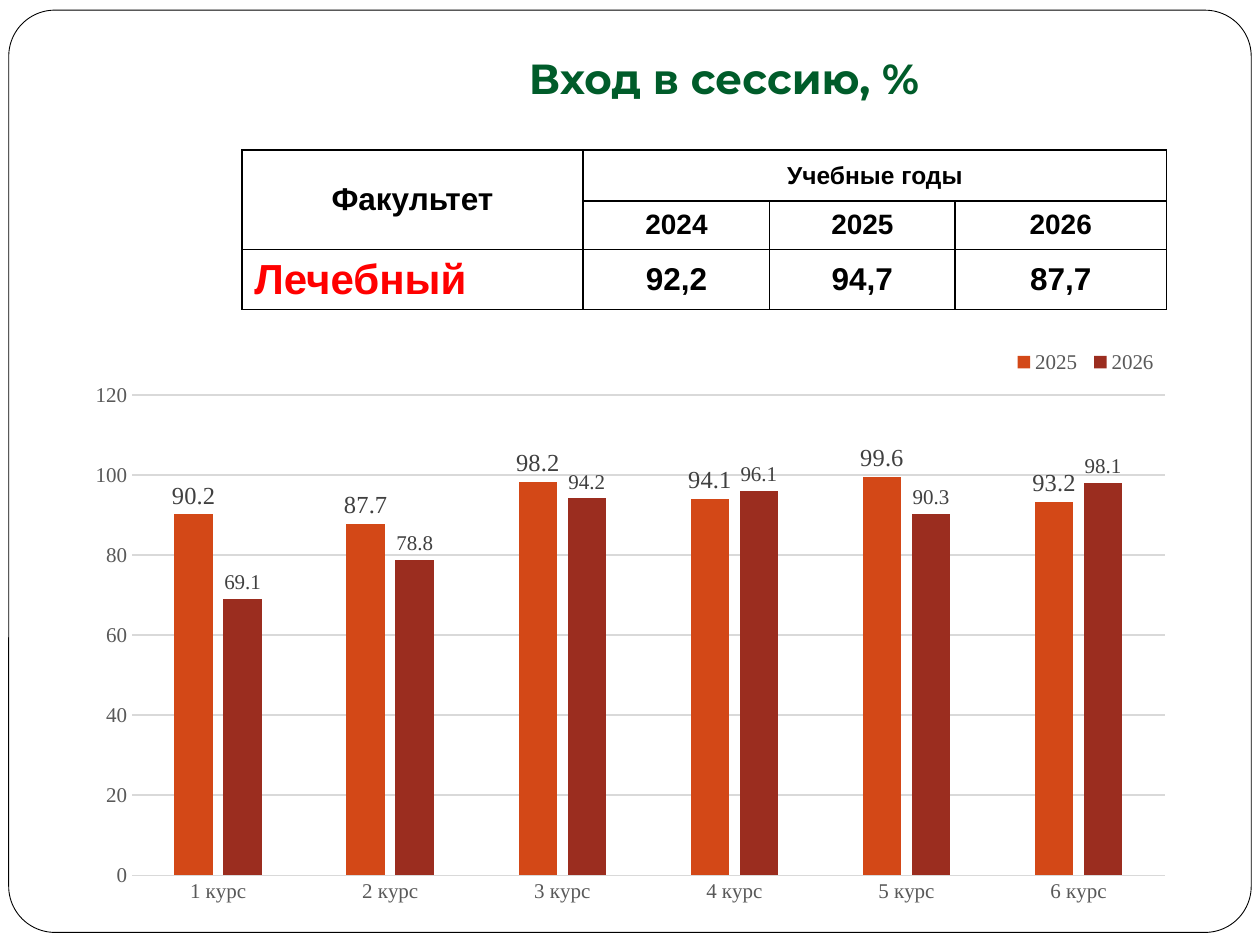
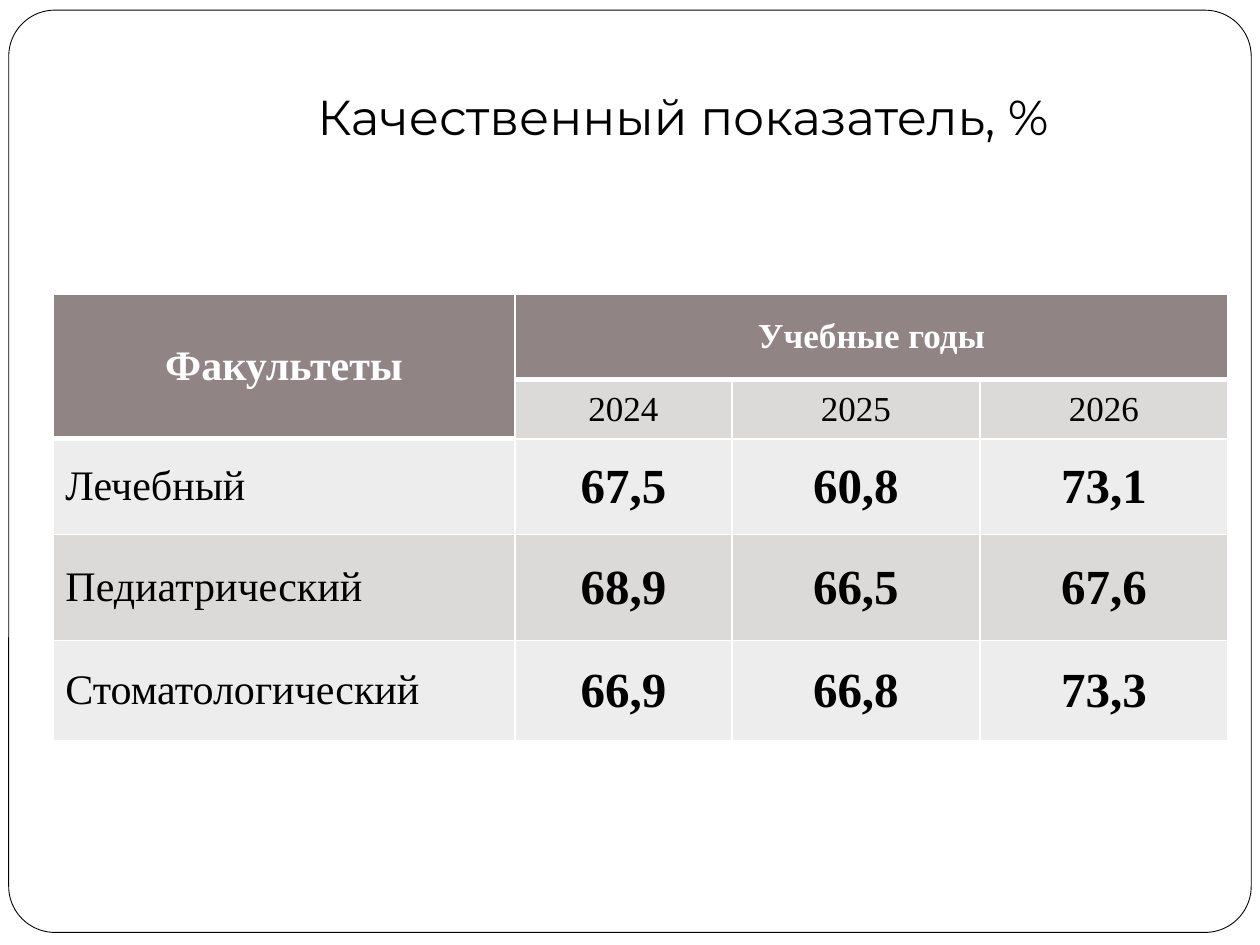
"""Build two slides on exam-session results by faculty."""
from dataclasses import dataclass

from lxml.etree import SubElement
from pptx import Presentation
from pptx.chart.data import CategoryChartData
from pptx.dml.color import RGBColor
from pptx.enum.chart import XL_CHART_TYPE, XL_LABEL_POSITION, XL_LEGEND_POSITION, XL_TICK_MARK
from pptx.enum.shapes import MSO_SHAPE
from pptx.enum.text import MSO_ANCHOR, MSO_AUTO_SIZE, PP_ALIGN
from pptx.oxml import parse_xml
from pptx.oxml.ns import nsdecls, qn
from pptx.util import Pt

BLACK = RGBColor(0x00, 0x00, 0x00)
WHITE = RGBColor(0xFF, 0xFF, 0xFF)
GREEN = RGBColor(0x00, 0x5C, 0x2A)
RED = RGBColor(0xFF, 0x00, 0x00)
TAUPE = RGBColor(0x91, 0x84, 0x85)
BAND_DARK = RGBColor(0xDC, 0xD9, 0xD9)
BAND_LIGHT = RGBColor(0xEE, 0xED, 0xED)
GRID = RGBColor(0xD9, 0xD9, 0xD9)
AXIS_TEXT = RGBColor(0x59, 0x59, 0x59)
LABEL_TEXT = RGBColor(0x40, 0x40, 0x40)
ORANGE = RGBColor(0xD3, 0x48, 0x17)
BRICK = RGBColor(0x9B, 0x2D, 0x1F)

TITLE_FONT = "Montserrat"
SERIF = "Times New Roman"
YEARS = ("2024", "2025", "2026")


@dataclass(frozen=True)
class TextStyle:
    size: float
    color: RGBColor = BLACK
    bold: bool = False
    font: str = SERIF


@dataclass(frozen=True)
class Title:
    text: str
    box: tuple[float, float, float, float]
    style: TextStyle
    align: PP_ALIGN


@dataclass(frozen=True)
class FacultyTable:
    left: float
    top: float
    widths: tuple[float, ...]
    heights: tuple[float, ...]
    corner: str
    results: dict[str, tuple[str, ...]]
    corner_style: TextStyle
    span_style: TextStyle
    year_style: TextStyle
    faculty_style: TextStyle
    value_style: TextStyle
    border: RGBColor
    header_rule: float
    header_fill: RGBColor
    bands: tuple[RGBColor, RGBColor]

    def style_at(self, row: int, col: int) -> TextStyle:
        if row == 0:
            return self.span_style if col else self.corner_style
        if col == 0:
            return self.faculty_style
        return self.year_style if row == 1 else self.value_style


@dataclass(frozen=True)
class YearSeries:
    name: str
    values: tuple[float, ...]
    color: RGBColor
    label_size: float


INTAKE_TITLE = Title("Вход в сессию, %", (131.8, 30.2, 563.8, 36),
                     TextStyle(24, GREEN, True, TITLE_FONT), PP_ALIGN.CENTER)
QUALITY_TITLE = Title("Качественный показатель, %", (174.2, 30.2, 486, 59.8),
                      TextStyle(28, font=TITLE_FONT), PP_ALIGN.LEFT)

INTAKE_TABLE = FacultyTable(
    left=138.2, top=85.7, widths=(195.1, 106.6, 105.8, 121), heights=(29.3, 27.5, 34.5),
    corner="Факультет", results={"Лечебный": ("92,2", "94,7", "87,7")},
    corner_style=TextStyle(18, bold=True, font="Arial"),
    span_style=TextStyle(14, bold=True, font="Arial"),
    year_style=TextStyle(16, bold=True, font="Arial"),
    faculty_style=TextStyle(24, RED, True, "Arial"),
    value_style=TextStyle(18, bold=True, font="Arial"),
    border=BLACK, header_rule=1, header_fill=WHITE, bands=(WHITE, WHITE))

QUALITY_TABLE = FacultyTable(
    left=30.2, top=168, widths=(264.2, 123.8, 141.8, 141.8), heights=(49, 33.1, 54.7, 60.5, 57.6),
    corner="Факультеты",
    results={"Лечебный": ("67,5", "60,8", "73,1"),
             "Педиатрический": ("68,9", "66,5", "67,6"),
             "Стоматологический": ("66,9", "66,8", "73,3")},
    corner_style=TextStyle(24, WHITE, True),
    span_style=TextStyle(20, WHITE, True),
    year_style=TextStyle(20),
    faculty_style=TextStyle(24),
    value_style=TextStyle(28, bold=True),
    border=WHITE, header_rule=3, header_fill=TAUPE, bands=(BAND_LIGHT, BAND_DARK))

SERIES = (YearSeries("2025", (90.2, 87.7, 98.2, 94.1, 99.6, 93.2), ORANGE, 14),
          YearSeries("2026", (69.1, 78.8, 94.2, 96.1, 90.3, 98.1), BRICK, 12))


def set_font(font, style: TextStyle) -> None:
    """Apply a text style to a font."""
    font.size, font.bold, font.name = Pt(style.size), style.bold, style.font
    font.color.rgb = style.color


def add_frame(slide, layout) -> None:
    """Place the rounded border on the layout behind every title."""
    s = slide.shapes.add_shape(MSO_SHAPE.ROUNDED_RECTANGLE, Pt(5), Pt(5.8), Pt(710), Pt(527))
    s.adjustments[0] = 0.05
    s.shadow.inherit = False
    s.fill.solid()
    s.fill.fore_color.rgb = WHITE
    s.line.color.rgb = BLACK
    s.line.width = Pt(0.5)
    layout.shapes._spTree.insert(2, s._element)


def set_title(slide, title: Title) -> None:
    """Move, fill and format the title placeholder."""
    s = slide.shapes.title
    s.left, s.top, s.width, s.height = map(Pt, title.box)
    tf = s.text_frame
    tf.text = title.text
    tf.word_wrap = True
    tf.auto_size = MSO_AUTO_SIZE.NONE
    tf.vertical_anchor = MSO_ANCHOR.BOTTOM
    tf.margin_left = tf.margin_right = tf.margin_bottom = Pt(7.2)
    tf.margin_top = Pt(3.6)
    p = tf.paragraphs[0]
    p.alignment = title.align
    set_font(p.runs[0].font, title.style)


def set_borders(cell, color: RGBColor, top: float, bottom: float) -> None:
    """Draw the four borders of a cell."""
    tc_pr = cell._tc.get_or_add_tcPr()
    for side, width in (("L", 1), ("R", 1), ("T", top), ("B", bottom)):
        ln = SubElement(tc_pr, qn(f"a:ln{side}"), w=str(Pt(width)))
        SubElement(SubElement(ln, qn("a:solidFill")), qn("a:srgbClr"), val=str(color))


def add_table(slide, spec: FacultyTable) -> None:
    """Draw a faculty table with a two-row header."""
    rows = [(spec.corner, "Учебные годы", "", ""), ("", *YEARS)]
    rows += [(faculty, *values) for faculty, values in spec.results.items()]
    table = slide.shapes.add_table(
        len(rows), len(spec.widths), Pt(spec.left), Pt(spec.top),
        Pt(sum(spec.widths)), Pt(sum(spec.heights))).table
    table.first_row = table.horz_banding = False
    for column, width in zip(table.columns, spec.widths):
        column.width = Pt(width)
    for table_row, height in zip(table.rows, spec.heights):
        table_row.height = Pt(height)

    def is_header(row: int, col: int) -> bool:
        return row == 0 or (row, col) == (1, 0)

    for r, row in enumerate(rows):
        for c, text in enumerate(row):
            cell = table.cell(r, c)
            header = is_header(r, c)
            set_borders(cell, spec.border,
                        top=spec.header_rule if r and is_header(r - 1, c) else 1,
                        bottom=spec.header_rule if header else 1)
            cell.fill.solid()
            cell.fill.fore_color.rgb = spec.header_fill if header else spec.bands[r % 2]
            cell.vertical_anchor = MSO_ANCHOR.MIDDLE
            p = cell.text_frame.paragraphs[0]
            p.text = text
            p.alignment = PP_ALIGN.CENTER if c or header else PP_ALIGN.LEFT
            set_font(p.font, spec.style_at(r, c))
            for run in p.runs:
                set_font(run.font, spec.style_at(r, c))
    table.cell(0, 0).merge(table.cell(1, 0))
    table.cell(0, 1).merge(table.cell(0, 3))


def set_layout(parent, index: int, box: tuple[float, ...], inner: bool = False) -> None:
    """Fix the place of a chart part as fractions of the chart."""
    for old in parent.findall(qn("c:layout")):
        parent.remove(old)
    target = '<c:layoutTarget val="inner"/>' if inner else ""
    modes = '<c:xMode val="edge"/><c:yMode val="edge"/>'
    sizes = "".join(f'<c:{k} val="{v}"/>' for k, v in zip("xywh", box))
    parent.insert(index, parse_xml(
        f'<c:layout {nsdecls("c")}><c:manualLayout>{target}{modes}{sizes}'
        "</c:manualLayout></c:layout>"))


def set_line(line, color: RGBColor) -> None:
    """Format a thin chart line."""
    line.color.rgb = color
    line.width = Pt(0.75)


def add_course_chart(slide) -> None:
    """Draw the columns for each course and year."""
    data = CategoryChartData()
    data.categories = [f"{n} курс" for n in range(1, 7)]
    for series in SERIES:
        data.add_series(series.name, series.values)
    chart = slide.shapes.add_chart(XL_CHART_TYPE.COLUMN_CLUSTERED, Pt(41.8), Pt(188.6),
                                   Pt(635.8), Pt(334), data).chart
    axis_style = TextStyle(12, AXIS_TEXT)
    set_font(chart.font, TextStyle(10))
    chart.has_title = False
    chart.has_legend = True
    chart.legend.position = XL_LEGEND_POSITION.TOP
    chart.legend.include_in_layout = False
    set_font(chart.legend.font, axis_style)
    set_layout(chart.legend._element, 1, (0.84, 0.03, 0.14, 0.05))
    set_layout(chart._chartSpace.chart.plotArea, 0, (0.053, 0.111, 0.928, 0.822), inner=True)

    for axis in (chart.category_axis, chart.value_axis):
        axis.major_tick_mark = axis.minor_tick_mark = XL_TICK_MARK.NONE
        set_font(axis.tick_labels.font, axis_style)
    set_line(chart.category_axis.format.line, GRID)
    value_axis = chart.value_axis
    value_axis.minimum_scale, value_axis.maximum_scale, value_axis.major_unit = 0, 120, 20
    value_axis.format.line.fill.background()
    set_line(value_axis.major_gridlines.format.line, GRID)

    plot = chart.plots[0]
    plot.gap_width, plot.overlap = 219, -27
    plot.vary_by_categories = False
    for drawn, series in zip(plot.series, SERIES):
        drawn.format.fill.solid()
        drawn.format.fill.fore_color.rgb = series.color
        labels = drawn.data_labels
        labels.show_value = True
        labels.position = XL_LABEL_POSITION.OUTSIDE_END
        set_font(labels.font, TextStyle(series.label_size, LABEL_TEXT))


def main() -> None:
    """Build and save the slides."""
    prs = Presentation()
    prs.slide_width, prs.slide_height = Pt(720), Pt(540)
    layout = prs.slide_layouts[5]
    intake, quality = (prs.slides.add_slide(layout) for _ in range(2))
    add_frame(intake, layout)
    set_title(intake, INTAKE_TITLE)
    add_table(intake, INTAKE_TABLE)
    add_course_chart(intake)
    set_title(quality, QUALITY_TITLE)
    add_table(quality, QUALITY_TABLE)
    prs.save("out.pptx")


if __name__ == "__main__":
    main()
